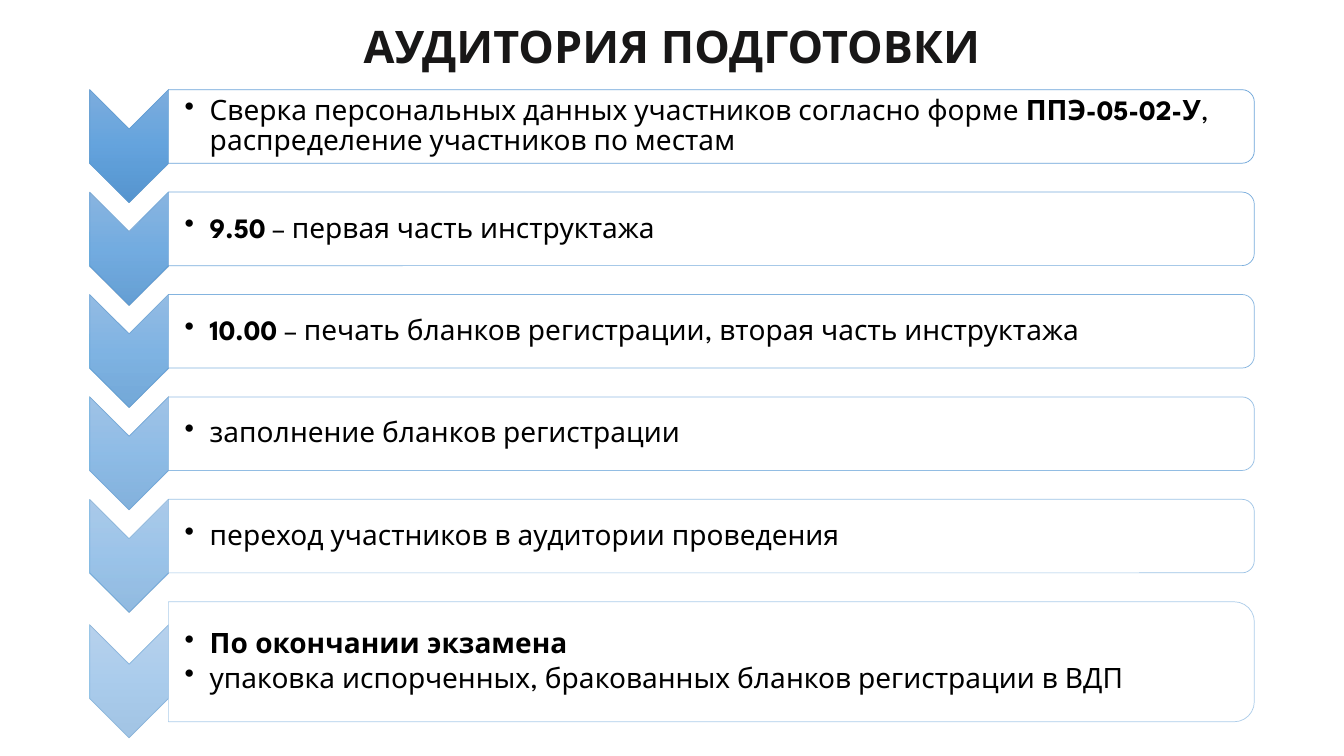
from lxml import etree
from pptx import Presentation
from pptx.dml.color import RGBColor
from pptx.enum.shapes import MSO_SHAPE
from pptx.enum.text import MSO_ANCHOR, MSO_AUTO_SIZE, PP_ALIGN
from pptx.oxml import parse_xml
from pptx.oxml.ns import qn
from pptx.util import Inches, Pt

CHEVRON = MSO_SHAPE.CHEVRON
PANEL = MSO_SHAPE.ROUND_2_SAME_RECTANGLE
MIDDLE = MSO_ANCHOR.MIDDLE
CENTER = PP_ALIGN.CENTER
FIXED = MSO_AUTO_SIZE.NONE

FONT = "League Spartan"
INK = RGBColor(0x18, 0x17, 0x17)
BLACK = RGBColor(0, 0, 0)
WHITE = RGBColor(0xFF, 0xFF, 0xFF)
BLUE = RGBColor(0x5B, 0x9B, 0xD5)
SHADES = (
    (0, RGBColor(0x71, 0xA6, 0xDB)),
    (50, RGBColor(0x55, 0x9B, 0xDB)),
    (100, RGBColor(0x44, 0x8A, 0xCA)),
)
NS = "http://schemas.openxmlformats.org/drawingml/2006/main"

WIDTH, HEIGHT = 13.33, 7.5
TOP, PITCH = 0.89, 1.016
LEFT, SPLIT, RIGHT = 0.89, 1.67, 12.44
LOW, TALL = 0.73, 1.19
ARROW = 1.12
DROP = (ARROW - LOW) / 2

STEPS = (
    [[("Сверка персональных данных участников согласно форме ", False),
      ("ППЭ-05-02-У", True),
      (", распределение участников по местам", False)]],
    [[("9.50", True), (" – первая часть инструктажа", False)]],
    [[("10.00 ", True),
      ("– печать бланков регистрации, вторая часть инструктажа", False)]],
    [[("заполнение бланков регистрации", False)]],
    [[("переход участников в аудитории проведения", False)]],
    [[("По окончании экзамена", True)],
     [("упаковка испорченных, бракованных бланков регистрации в ВДП", False)]],
)


def fade(fill, share):
    color = fill.find(".//" + qn("a:srgbClr"))
    etree.SubElement(color, qn("a:alpha"), val=str(share * 1000))


def shade(shape, share):
    stops = "".join(
        f'<a:gs pos="{pos * 1000}"><a:srgbClr val="{color}">'
        f'<a:alpha val="{share * 1000}"/></a:srgbClr></a:gs>'
        for pos, color in SHADES
    )
    props = shape._element.spPr
    props.find(qn("a:prstGeom")).addnext(parse_xml(
        f'<a:gradFill xmlns:a="{NS}" rotWithShape="0"><a:gsLst>{stops}</a:gsLst>'
        '<a:lin ang="5400000" scaled="0"/></a:gradFill>'
    ))


def add_turned(slide, kind, mid_x, mid_y, width, height, share):
    shape = slide.shapes.add_shape(
        kind, Inches(mid_x - height / 2), Inches(mid_y - width / 2),
        Inches(height), Inches(width))
    shape.rotation = 90
    shape.shadow.inherit = False
    shape.line.color.rgb = BLUE
    shape.line.width = Pt(0.5)
    fade(shape.line._ln, share)
    return shape


def add_bullet(para, parts):
    para.font.name = FONT
    para.font.size = Pt(20)
    para.font.color.rgb = BLACK
    para.line_spacing = 0.9
    para.space_after = Pt(3)
    props = para._p.get_or_add_pPr()
    props.set("marL", str(Inches(0.25)))
    props.set("indent", str(-Inches(0.25)))
    mark = etree.Element(qn("a:buChar"), char="•")
    props.find(qn("a:spcAft")).addnext(mark)
    for text, bold in parts:
        run = para.add_run()
        run.text = text
        run.font.bold = bold


def add_text(slide, top, height, lines):
    inset = height * 0.05
    box = slide.shapes.add_textbox(
        Inches(SPLIT), Inches(top + inset),
        Inches(RIGHT - SPLIT - inset), Inches(height - 2 * inset))
    frame = box.text_frame
    frame.word_wrap = True
    frame.vertical_anchor = MIDDLE
    frame.margin_left = Inches(0.16)
    frame.margin_top = frame.margin_right = frame.margin_bottom = Inches(0.01)
    for i, parts in enumerate(lines):
        add_bullet(frame.add_paragraph() if i else frame.paragraphs[0], parts)


def add_step(slide, row, lines):
    top = TOP + row * PITCH
    height = TALL if len(lines) > 1 else LOW
    mid = top + height / 2
    share = 90 - 8 * row
    arrow = add_turned(slide, CHEVRON, (LEFT + SPLIT) / 2, mid + DROP,
                       SPLIT - LEFT, ARROW, share)
    shade(arrow, share)
    panel = add_turned(slide, PANEL, (SPLIT + RIGHT) / 2, mid,
                       RIGHT - SPLIT, height, share)
    panel.fill.solid()
    panel.fill.fore_color.rgb = WHITE
    fade(panel._element.spPr.find(qn("a:solidFill")), 90)
    add_text(slide, top, height, lines)


def set_title(slide, text):
    title = slide.shapes.title
    title.left, title.top = Inches(0.38), Inches(0.13)
    title.width, title.height = Inches(12.57), Inches(0.64)
    frame = title.text_frame
    frame.text = text
    frame.auto_size = FIXED
    frame.vertical_anchor = MIDDLE
    para = frame.paragraphs[0]
    para.alignment = CENTER
    para.line_spacing = 1.0
    para.font.name = FONT
    para.font.size = Pt(32)
    para.font.bold = True
    para.font.color.rgb = INK


def main():
    deck = Presentation()
    deck.slide_width, deck.slide_height = Inches(WIDTH), Inches(HEIGHT)
    slide = deck.slides.add_slide(deck.slide_layouts[5])
    set_title(slide, "АУДИТОРИЯ ПОДГОТОВКИ")
    for row, lines in enumerate(STEPS):
        add_step(slide, row, lines)
    deck.save("out.pptx")


if __name__ == "__main__":
    main()
